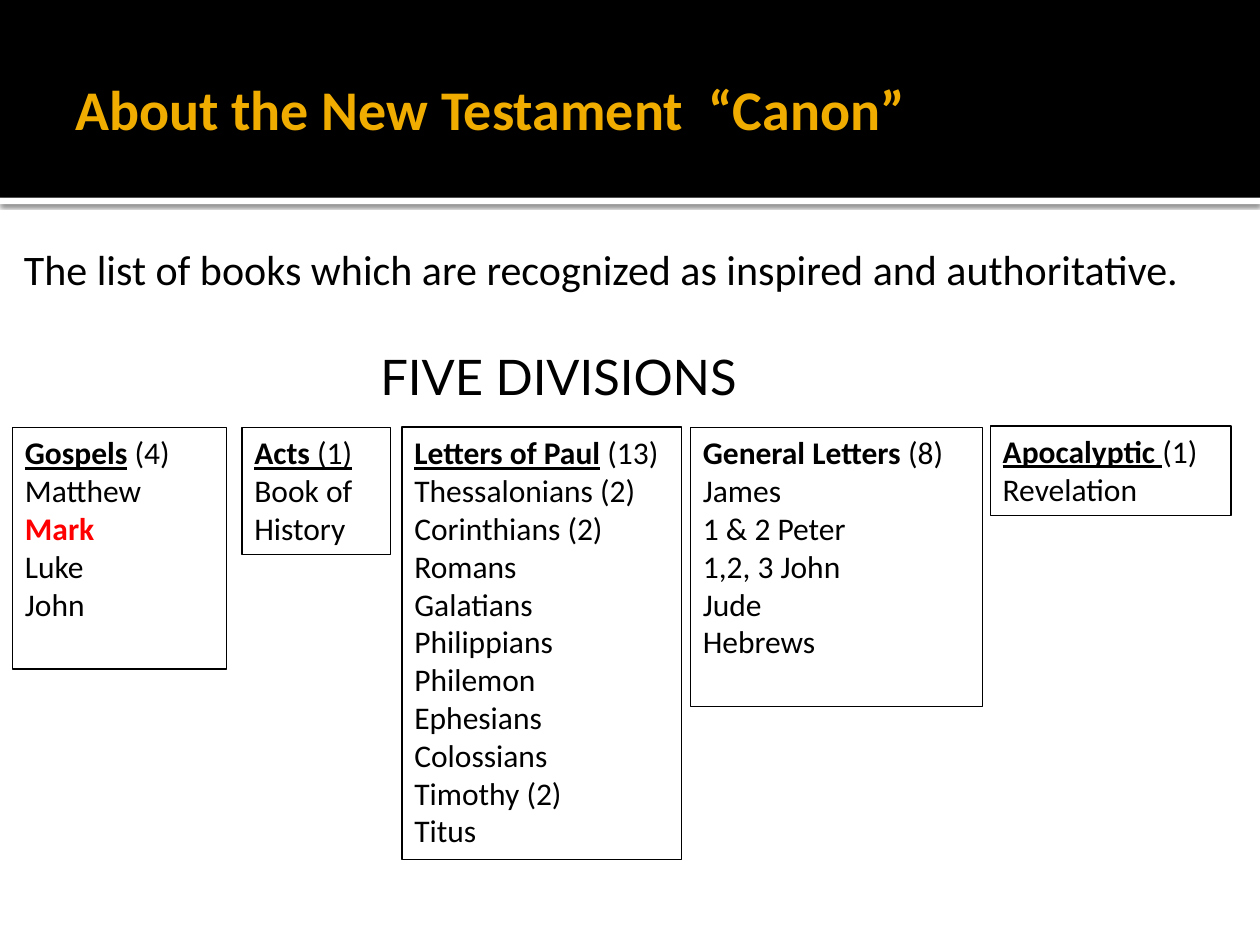
from dataclasses import dataclass

from lxml.etree import SubElement
from pptx import Presentation
from pptx.dml.color import RGBColor
from pptx.enum.shapes import MSO_SHAPE
from pptx.enum.text import MSO_ANCHOR
from pptx.oxml.ns import qn
from pptx.util import Inches, Pt

BLACK, WHITE, GOLD, RED = "000000", "FFFFFF", "F0AD00", "FF0000"


@dataclass
class Division:
    """One boxed group of books: a bold heading, its count and the books."""
    heading: str
    count: str
    books: list[str]
    left: float
    width: float
    height: float
    top: float = 3.39
    heading_underlined: bool = True
    count_underlined: bool = False


DIVISIONS = [
    Division("Gospels", " (4)", ["Matthew", "Mark", "Luke", "John"], 0.1, 1.7, 1.92),
    Division("Acts ", "(1)", ["Book of History"], 1.92, 1.18, 1.01, count_underlined=True),
    Division("Letters of Paul", " (13)",
             ["Thessalonians (2)", "Corinthians (2)", "Romans", "Galatians", "Philippians",
              "Philemon", "Ephesians", "Colossians", "Timothy (2)", "Titus"],
             3.19, 2.22, 3.43),
    Division("General Letters ", "(8)",
             ["James", "1 & 2 Peter", "1,2, 3 John", "Jude", "Hebrews"],
             5.48, 2.32, 2.22, heading_underlined=False),
    Division("Apocalyptic ", "(1)", ["Revelation"], 7.86, 1.91, 0.71, top=3.38),
]
HIGHLIGHTED_BOOK = "Mark"


def color(hex_string: str) -> RGBColor:
    return RGBColor.from_string(hex_string)


def style(font, size: float, hex_string: str, bold: bool = False, name: str = "Calibri") -> None:
    font.name, font.size, font.bold = name, Pt(size), bold
    font.color.rgb = color(hex_string)


def add_band(page, top: float, height: float, fill: str):
    """Draw a borderless band across the page."""
    band = page.shapes.add_shape(MSO_SHAPE.RECTANGLE, 0, Inches(top), Inches(10), Inches(height))
    band.shadow.inherit = False
    band.fill.solid()
    band.fill.fore_color.rgb = color(fill)
    band.line.fill.background()
    return band


def add_soft_shadow(shape) -> None:
    """Cast a soft shadow straight down."""
    effects = shape._element.spPr.find(qn("a:effectLst"))
    shadow = SubElement(effects, qn("a:outerShdw"), blurRad=str(Pt(2.5)), dist=str(Pt(0.8)),
                        dir="5400000", algn="t", rotWithShape="0")
    tint = SubElement(shadow, qn("a:srgbClr"), val=BLACK)
    SubElement(tint, qn("a:alpha"), val="60000")


def add_text(page, left: float, top: float, width: float, height: float, text: str):
    """Add a wrapping text box with one paragraph."""
    box = page.shapes.add_textbox(Inches(left), Inches(top), Inches(width), Inches(height))
    box.text_frame.word_wrap = True
    box.text_frame.text = text
    return box.text_frame


def add_division(page, division: Division) -> None:
    box = page.shapes.add_textbox(Inches(division.left), Inches(division.top),
                                  Inches(division.width), Inches(division.height))
    box.line.color.rgb = color(BLACK)
    box.line.width = Pt(0.75)
    frame = box.text_frame
    frame.word_wrap = True

    para = frame.paragraphs[0]
    style(para.font, 18, BLACK)
    for text, bold, underlined in (
        (division.heading, True, division.heading_underlined),
        (division.count, False, division.count_underlined),
    ):
        span = para.add_run()
        span.text = text
        style(span.font, 18, BLACK, bold)
        span.font.underline = underlined

    for book in division.books:
        para = frame.add_paragraph()
        para.text = book
        highlighted = book == HIGHLIGHTED_BOOK
        style(para.font, 18, RED if highlighted else BLACK, highlighted)


def main() -> None:
    deck = Presentation()
    deck.slide_width, deck.slide_height = Inches(10), Inches(7.5)
    page = deck.slides.add_slide(deck.slide_layouts[6])
    page.background.fill.solid()
    page.background.fill.fore_color.rgb = color(WHITE)

    # Header bands
    add_soft_shadow(add_band(page, 1.57, 0.05, WHITE))
    add_band(page, 0, 1.57, BLACK)

    # Title
    title = add_text(page, 0.5, 0.17, 9, 1.37, "About the New Testament  “Canon”")
    title.vertical_anchor = MSO_ANCHOR.MIDDLE
    title.margin_right = Inches(0.05)
    style(title.paragraphs[0].font, 32, GOLD, bold=True)

    # Definition
    definition = add_text(page, 0, 1.83, 10, 5.58,
                          "The list of books which are recognized as inspired and authoritative.")
    definition.margin_left = Inches(0.19)
    definition.margin_top = Inches(0.1)
    style(definition.paragraphs[0].font, 24, BLACK)

    # Divisions and their caption
    for division in DIVISIONS:
        add_division(page, division)
    caption = add_text(page, 2.92, 2.7, 3.09, 0.57, "FIVE DIVISIONS")
    style(caption.paragraphs[0].font, 28, BLACK, name="Lato")

    deck.save("out.pptx")


if __name__ == "__main__":
    main()
